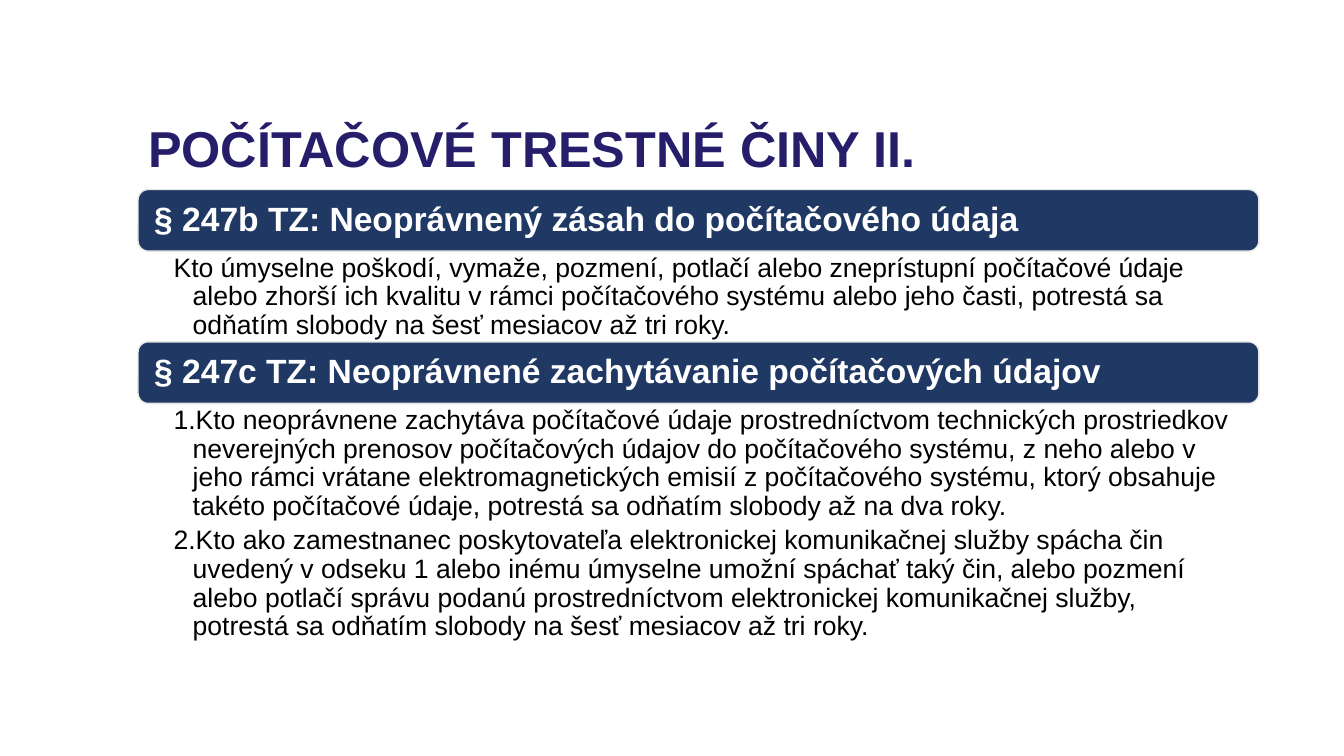
import pptx
import pptx.dml.color
import pptx.enum.shapes
import pptx.enum.text
import pptx.oxml.ns
import pptx.util
from lxml import etree

Pt = pptx.util.Pt
Anchor = pptx.enum.text.MSO_ANCHOR


def colour(code):
    return pptx.dml.color.RGBColor.from_string(code)


class StatuteSlide:
    """Holds the slide style and draws the title, section bars and provisions."""

    font_name = "Arial"
    navy, indigo, pale, white, black = "203864", "261E6A", "E7E6E6", "FFFFFF", "000000"
    left, width, bar_height = 98.6, 800.6, 44
    hanging = 13.7

    def __init__(self, deck):
        self.page = deck.slides.add_slide(deck.slide_layouts[5])

    def frame(self, box, anchor, margins):
        frame = box.text_frame
        frame.word_wrap = True
        frame.auto_size = pptx.enum.text.MSO_AUTO_SIZE.NONE
        frame.vertical_anchor = anchor
        frame.margin_left, frame.margin_top, frame.margin_right, frame.margin_bottom = map(Pt, margins)
        return frame

    def set_text(self, para, text, size, code, bold=False):
        para.text = text
        para.alignment = pptx.enum.text.PP_ALIGN.LEFT
        para.line_spacing = 0.9
        para.font.name = self.font_name
        para.font.size = Pt(size)
        para.font.bold = bold
        para.font.color.rgb = colour(code)

    def title(self, text, top, height):
        box = self.page.shapes.title
        box.left, box.top, box.width, box.height = map(Pt, (self.left, top, 795.6, height))
        frame = self.frame(box, Anchor.TOP, (7.2, 3.6, 7.2, 3.6))
        self.set_text(frame.paragraphs[0], text, 36, self.indigo, bold=True)

    def bar(self, text, top):
        box = self.page.shapes.add_shape(
            pptx.enum.shapes.MSO_SHAPE.ROUNDED_RECTANGLE,
            Pt(self.left), Pt(top), Pt(self.width), Pt(self.bar_height))
        box.shadow.inherit = False
        box.fill.solid()
        box.fill.fore_color.rgb = colour(self.navy)
        box.line.color.rgb = colour(self.pale)
        box.line.width = Pt(1)
        frame = self.frame(box, Anchor.MIDDLE, (9.4, 7.2, 9.4, 7.2))
        self.set_text(frame.paragraphs[0], text, 24, self.white, bold=True)

    def provisions(self, texts, top, height):
        box = self.page.shapes.add_textbox(Pt(self.left), Pt(top), Pt(self.width), Pt(height))
        frame = self.frame(box, Anchor.TOP, (25.4, 2.2, 13.7, 2.2))
        for index, text in enumerate(texts):
            para = frame.add_paragraph() if index else frame.paragraphs[0]
            para.level = 1
            para.space_after = Pt(3.8)
            properties = para._p.get_or_add_pPr()
            properties.set("marL", str(Pt(self.hanging)))
            properties.set("indent", str(-Pt(self.hanging)))
            if len(texts) > 1:
                number = etree.SubElement(properties, pptx.oxml.ns.qn("a:buAutoNum"))
                number.set("type", "arabicPeriod")
            self.set_text(para, text, 19, self.black)

    def section(self, heading, texts, top, height):
        self.bar(heading, top)
        self.provisions(texts, top + self.bar_height, height)


def main():
    deck = pptx.Presentation()
    deck.slide_width, deck.slide_height = Pt(960), Pt(540)
    slide = StatuteSlide(deck)
    slide.title("POČÍTAČOVÉ TRESTNÉ ČINY II.", 85, 59)
    slide.section(
        "§ 247b TZ: Neoprávnený zásah do počítačového údaja",
        ["Kto úmyselne poškodí, vymaže, pozmení, potlačí alebo zneprístupní počítačové údaje "
         "alebo zhorší ich kvalitu v rámci počítačového systému alebo jeho časti, potrestá sa "
         "odňatím slobody na šesť mesiacov až tri roky."],
        135.4, 64.8)
    slide.section(
        "§ 247c TZ: Neoprávnené zachytávanie počítačových údajov",
        ["Kto neoprávnene zachytáva počítačové údaje prostredníctvom technických prostriedkov "
         "neverejných prenosov počítačových údajov do počítačového systému, z neho alebo v jeho "
         "rámci vrátane elektromagnetických emisií z počítačového systému, ktorý obsahuje takéto "
         "počítačové údaje, potrestá sa odňatím slobody až na dva roky.",
         "Kto ako zamestnanec poskytovateľa elektronickej komunikačnej služby spácha čin uvedený "
         "v odseku 1 alebo inému úmyselne umožní spáchať taký čin, alebo pozmení alebo potlačí "
         "správu podanú prostredníctvom elektronickej komunikačnej služby, potrestá sa odňatím "
         "slobody na šesť mesiacov až tri roky."],
        244.2, 168.5)
    deck.save("out.pptx")


if __name__ == "__main__":
    main()
